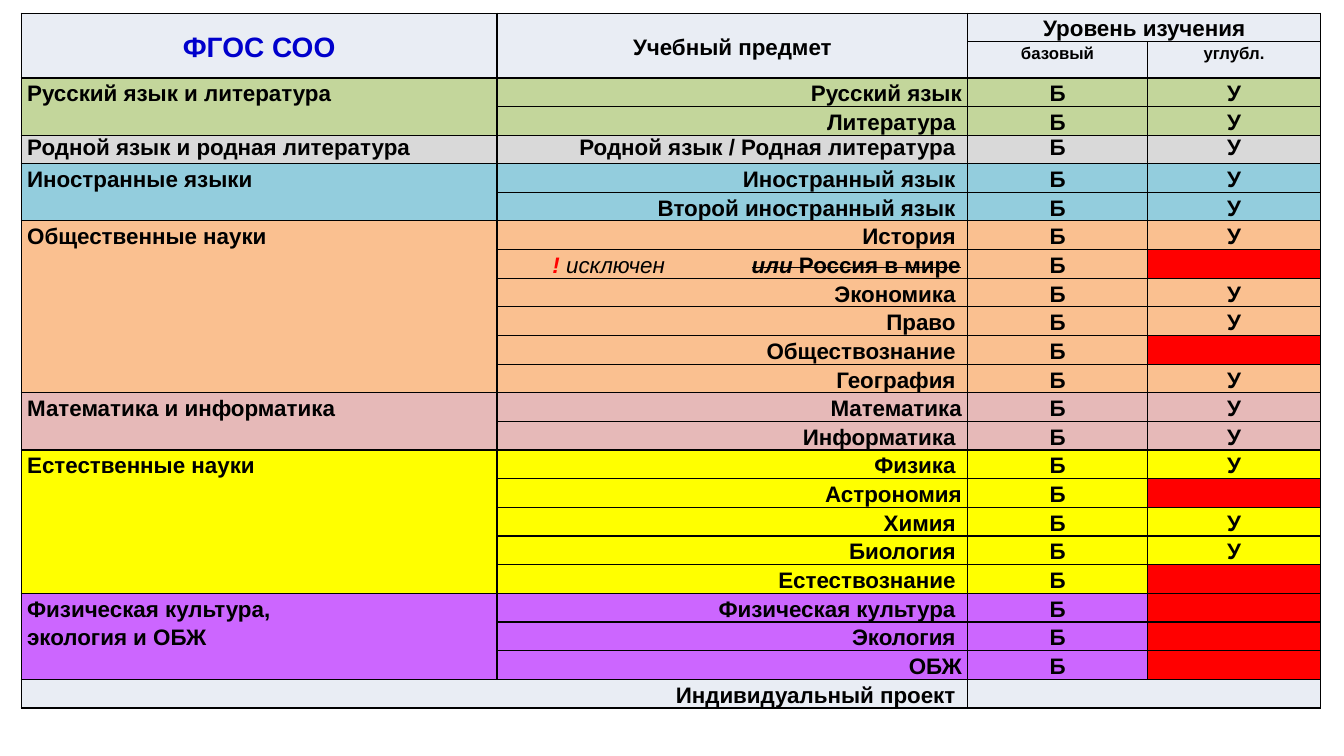
"""Build the slide with the table of school subjects and study levels."""
from lxml.etree import SubElement
from pptx import Presentation
from pptx.dml.color import RGBColor
from pptx.enum.text import MSO_ANCHOR as ANCHOR, PP_ALIGN as ALIGN
from pptx.oxml.ns import qn
from pptx.util import Inches, Pt

BLACK = RGBColor(0x00, 0x00, 0x00)
BLUE = RGBColor(0x00, 0x00, 0xCC)
RED = RGBColor(0xFF, 0x00, 0x00)
PALE = RGBColor(0xE9, 0xED, 0xF4)
GREEN = RGBColor(0xC3, 0xD6, 0x9B)
GREY = RGBColor(0xD9, 0xD9, 0xD9)
AQUA = RGBColor(0x93, 0xCD, 0xDD)
ORANGE = RGBColor(0xFA, 0xC0, 0x90)
PINK = RGBColor(0xE6, 0xB9, 0xB8)
YELLOW = RGBColor(0xFF, 0xFF, 0x00)
VIOLET = RGBColor(0xCC, 0x66, 0xFF)

EXCLUDED = "или Россия в мире"
BASIC_ONLY = {EXCLUDED, "Обществознание ", "Астрономия", "Естествознание ",
              "Физическая культура ", "Экология ", "ОБЖ"}
AREAS = [
    ("Русский язык и литература", GREEN, ["Русский язык", "Литература "]),
    ("Родной язык и родная литература", GREY, ["Родной язык / Родная литература "]),
    ("Иностранные языки", AQUA, ["Иностранный язык ", "Второй иностранный язык "]),
    ("Общественные науки", ORANGE, ["История ", EXCLUDED, "Экономика ", "Право ",
                                    "Обществознание ", "География "]),
    ("Математика и информатика", PINK, ["Математика", "Информатика "]),
    ("Естественные науки", YELLOW, ["Физика ", "Астрономия", "Химия ", "Биология ",
                                    "Естествознание "]),
    ("Физическая культура,\nэкология и ОБЖ", VIOLET, ["Физическая культура ", "Экология ", "ОБЖ"]),
]
COLS = [4.72, 4.67, 1.78, 1.72]
ROWS = [0.28, 0.36] + [0.28] * 22


def add_run(p, text, size=16, color=BLACK, bold=True, italic=False, strike=False):
    r = p.add_run()
    r.text = text
    r.font.name = "Arial"
    r.font.size = Pt(size)
    r.font.bold = bold
    r.font.italic = italic
    r.font.color.rgb = color
    if strike:
        r.font._element.set("strike", "sngStrike")


def write(cell, text, align=ALIGN.CENTER, spacing=1.15, **font):
    tf = cell.text_frame
    for i, line in enumerate(text.split("\n")):
        p = tf.add_paragraph() if i else tf.paragraphs[0]
        p.alignment = align
        p.line_spacing = spacing
        add_run(p, line, **font)


prs = Presentation()
prs.slide_width, prs.slide_height = Inches(13.33), Inches(7.5)
s = prs.slides.add_slide(prs.slide_layouts[6])
table = s.shapes.add_table(len(ROWS), len(COLS), Inches(0.21), Inches(0.13),
                           Inches(sum(COLS)), Inches(sum(ROWS))).table
table.first_row = table.horz_banding = False
for col, width in zip(table.columns, COLS):
    col.width = Inches(width)
for row, height in zip(table.rows, ROWS):
    row.height = Inches(height)

for cell in table.iter_cells():
    cell.margin_left = cell.margin_right = Inches(0.06)
    cell.margin_top = cell.margin_bottom = 0
    tcPr = cell._tc.get_or_add_tcPr()
    for side in ("a:lnL", "a:lnR", "a:lnT", "a:lnB"):
        ln = SubElement(tcPr, qn(side), w=str(Pt(1)))
        fill = SubElement(ln, qn("a:solidFill"))
        SubElement(fill, qn("a:srgbClr"), val=str(BLACK))
    cell.fill.solid()
    cell.fill.fore_color.rgb = PALE
    SubElement(cell.text_frame.paragraphs[0]._p, qn("a:endParaRPr"), sz="1200")

for top, left, bottom, right in [(0, 0, 1, 0), (0, 1, 1, 1), (0, 2, 0, 3),
                                 (23, 0, 23, 1), (23, 2, 23, 3)]:
    table.cell(top, left).merge(table.cell(bottom, right))
for col in (0, 1):
    table.cell(0, col).vertical_anchor = ANCHOR.MIDDLE
write(table.cell(0, 0), "ФГОС СОО", size=20, color=BLUE)
write(table.cell(0, 1), "Учебный предмет")
write(table.cell(0, 2), "Уровень изучения")
write(table.cell(1, 2), "базовый", size=12)
write(table.cell(1, 3), "углубл.", size=12)
write(table.cell(23, 0), "Индивидуальный проект ", align=ALIGN.RIGHT)

row = 2
for area, color, subjects in AREAS:
    spacing = 1.0 if color == GREY else 1.15
    first = table.cell(row, 0)
    if len(subjects) > 1:
        first.merge(table.cell(row + len(subjects) - 1, 0))
    write(first, area, align=ALIGN.LEFT, spacing=spacing)
    for subject in subjects:
        cells = [table.cell(row, col) for col in range(4)]
        for cell in cells:
            cell.fill.fore_color.rgb = color
        if subject == EXCLUDED:
            cells[1].margin_left = Inches(0.55)
            p = cells[1].text_frame.paragraphs[0]
            tabs = SubElement(p._p.get_or_add_pPr(), qn("a:tabLst"))
            SubElement(tabs, qn("a:tab"), pos=str(Inches(4.05)), algn="r")
            p.line_spacing = 1.15
            add_run(p, "! ", color=RED, italic=True)
            add_run(p, "исключен\t", bold=False, italic=True)
            add_run(p, "или", italic=True, strike=True)
            add_run(p, " Россия в мире", strike=True)
        else:
            write(cells[1], subject, align=ALIGN.RIGHT, spacing=spacing)
        write(cells[2], "Б", spacing=spacing)
        if subject in BASIC_ONLY:
            cells[3].fill.fore_color.rgb = RED
        else:
            write(cells[3], "У", spacing=spacing)
        row += 1

prs.save("out.pptx")
